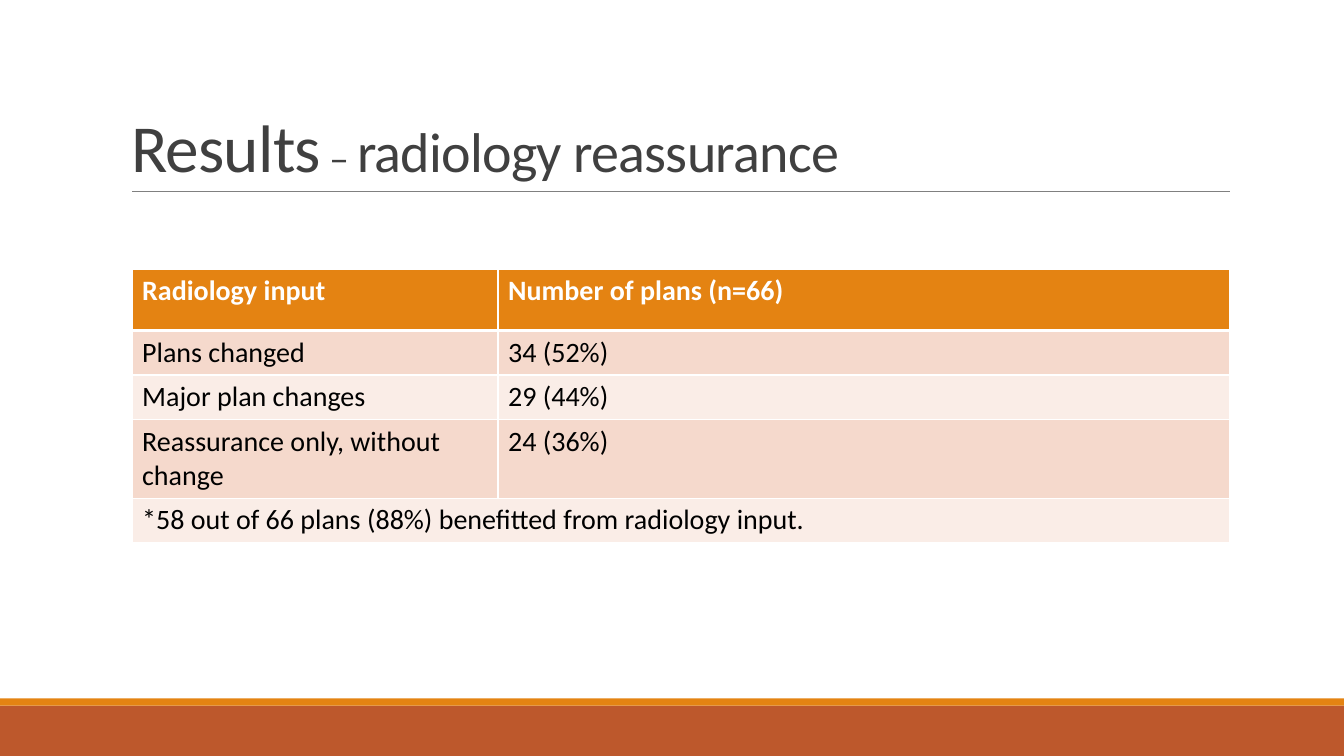
from typing import NamedTuple

from lxml import etree
from pptx import Presentation
from pptx.dml.color import RGBColor
from pptx.enum.shapes import MSO_CONNECTOR, MSO_SHAPE
from pptx.enum.text import MSO_ANCHOR, MSO_AUTO_SIZE, PP_ALIGN
from pptx.oxml.ns import qn
from pptx.util import Inches, Pt

RECTANGLE = MSO_SHAPE.RECTANGLE
STRAIGHT = MSO_CONNECTOR.STRAIGHT
BOTTOM = MSO_ANCHOR.BOTTOM
NO_AUTOFIT = MSO_AUTO_SIZE.NONE
LEFT = PP_ALIGN.LEFT

ORANGE = RGBColor(0xE4, 0x83, 0x12)
RUST = RGBColor(0xBD, 0x58, 0x2C)
GREY = RGBColor(0x80, 0x80, 0x80)
DARK = RGBColor(0x40, 0x40, 0x40)
BLACK = RGBColor(0, 0, 0)
WHITE = RGBColor(0xFF, 0xFF, 0xFF)
BANDS = (RGBColor(0xF5, 0xD9, 0xCC), RGBColor(0xFA, 0xED, 0xE7))

FONT = "Calibri"
WIDTH, HEIGHT = Inches(13.33), Inches(7.5)
MARGIN = Inches(1.31)
CONTENT_WIDTH = Inches(10.89)
COLUMN_SHARES = (1 / 3, 2 / 3)
ROW_HEIGHTS = (0.61, 0.35, 0.35, 0.43, 0.35)
ROWS = (
    ("Radiology input", "Number of plans (n=66)"),
    ("Plans changed", "34 (52%)"),
    ("Major plan changes", "29 (44%)"),
    ("Reassurance only, without change", "24 (36%)"),
    ("*58 out of 66 plans (88%) benefitted from radiology input.",),
)


class Band(NamedTuple):
    top: float
    height: float
    color: RGBColor


class TitlePart(NamedTuple):
    text: str
    size: int


FOOTER_BANDS = (Band(7, 0.5, RUST), Band(6.93, 0.07, ORANGE))
TITLE_PARTS = (
    TitlePart("Results", 48),
    TitlePart(" – ", 28),
    TitlePart("radiology reassurance", 40),
)


def format_font(font, size: int, color: RGBColor, bold: bool = False) -> None:
    for name, value in {"name": FONT, "size": Pt(size), "bold": bold}.items():
        setattr(font, name, value)
    font.color.rgb = color


def add_band(slide, band: Band) -> None:
    shape = slide.shapes.add_shape(
        RECTANGLE, 0, Inches(band.top), WIDTH, Inches(band.height))
    shape.shadow.inherit = False
    shape.fill.solid()
    shape.fill.fore_color.rgb = band.color
    shape.line.fill.background()


def add_title_rule(slide) -> None:
    rule = slide.shapes.add_connector(
        STRAIGHT, MARGIN, Inches(1.9), MARGIN + CONTENT_WIDTH, Inches(1.9))
    rule.line.color.rgb = GREY
    rule.line.width = Pt(0.5)
    etree.SubElement(rule._element.spPr, qn("a:effectLst"))


def fill_title(title) -> None:
    box = {"left": 1.2, "top": 0.31, "width": 11, "height": 1.59}
    for name, value in box.items():
        setattr(title, name, Inches(value))
    frame = title.text_frame
    frame_format = {"vertical_anchor": BOTTOM, "auto_size": NO_AUTOFIT, "word_wrap": True}
    for name, value in frame_format.items():
        setattr(frame, name, value)
    paragraph = frame.paragraphs[0]
    paragraph.alignment = LEFT
    paragraph.line_spacing = 0.85
    for part in TITLE_PARTS:
        run = paragraph.add_run()
        run.text = part.text
        format_font(run.font, part.size, DARK)
        run._r.get_or_add_rPr().set("spc", "-50")


def set_borders(cell, top: int, bottom: int) -> None:
    """Draw white borders; must run before the cell's fill is set."""
    properties = cell._tc.get_or_add_tcPr()
    for side, width in {"L": 1, "R": 1, "T": top, "B": bottom}.items():
        line = etree.SubElement(properties, qn(f"a:ln{side}"), w=str(Pt(width)))
        fill = etree.SubElement(line, qn("a:solidFill"))
        etree.SubElement(fill, qn("a:srgbClr"), val=str(WHITE))


def add_results_table(slide) -> None:
    table = slide.shapes.add_table(
        len(ROWS), len(COLUMN_SHARES), MARGIN, Inches(2.67),
        CONTENT_WIDTH, Inches(sum(ROW_HEIGHTS))).table
    for column, share in zip(table.columns, COLUMN_SHARES):
        column.width = int(CONTENT_WIDTH * share)
    for index, (row, height) in enumerate(zip(table.rows, ROW_HEIGHTS)):
        row.height = Inches(height)
        header = index == 0
        for cell in row.cells:
            set_borders(cell, top=3 if index == 1 else 1, bottom=3 if header else 1)
            cell.fill.solid()
            cell.fill.fore_color.rgb = ORANGE if header else BANDS[(index - 1) % 2]
        for cell, text in zip(row.cells, ROWS[index]):
            run = cell.text_frame.paragraphs[0].add_run()
            run.text = text
            format_font(run.font, 20, WHITE if header else BLACK, bold=header)
    last = len(ROWS) - 1
    table.cell(last, 0).merge(table.cell(last, 1))


def main() -> None:
    presentation = Presentation()
    presentation.slide_width, presentation.slide_height = WIDTH, HEIGHT
    title_only = presentation.slide_layouts[5]
    slide = presentation.slides.add_slide(title_only)
    for band in FOOTER_BANDS:
        add_band(slide, band)
    add_title_rule(slide)
    fill_title(slide.shapes.title)
    add_results_table(slide)
    presentation.save("out.pptx")


if __name__ == "__main__":
    main()
